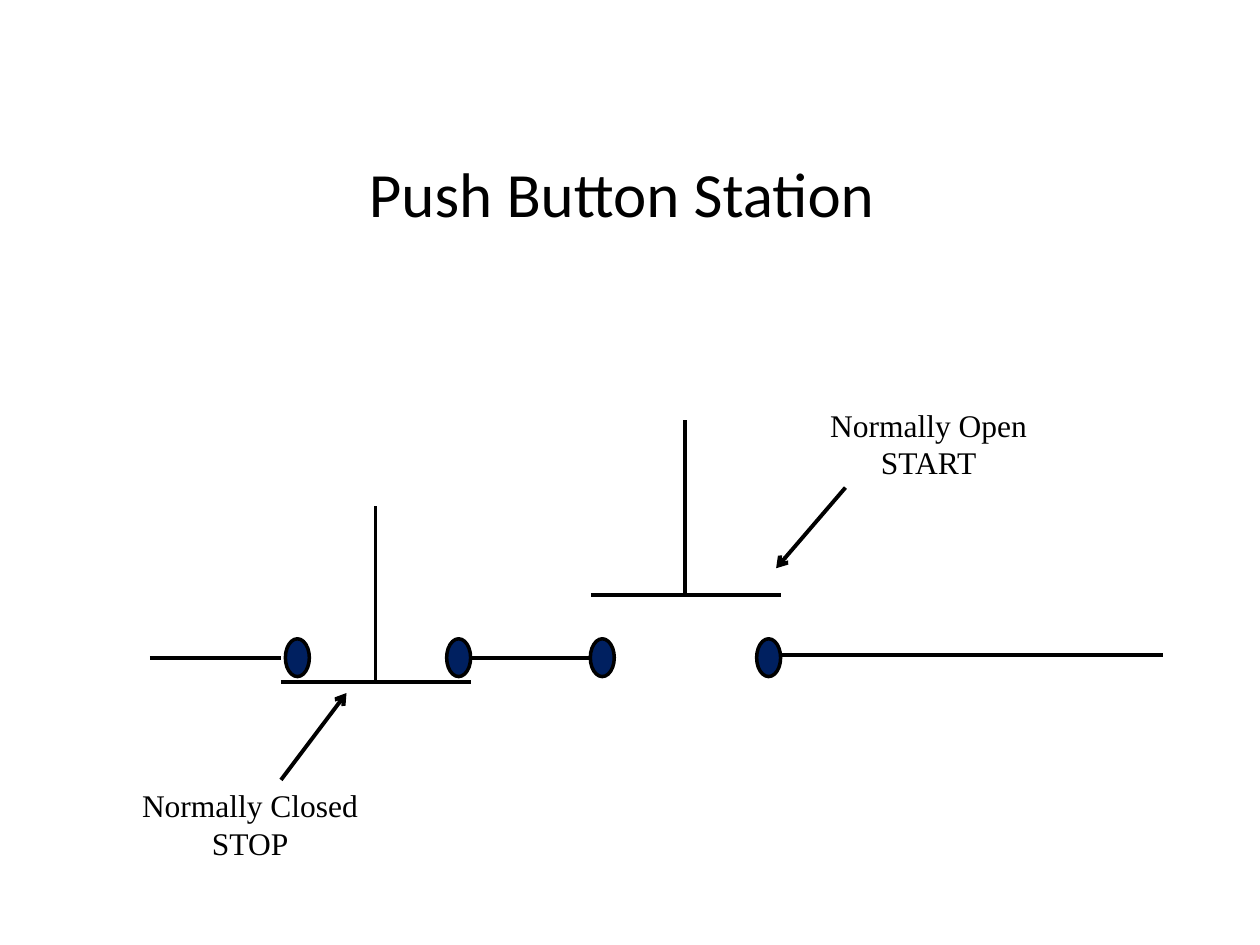
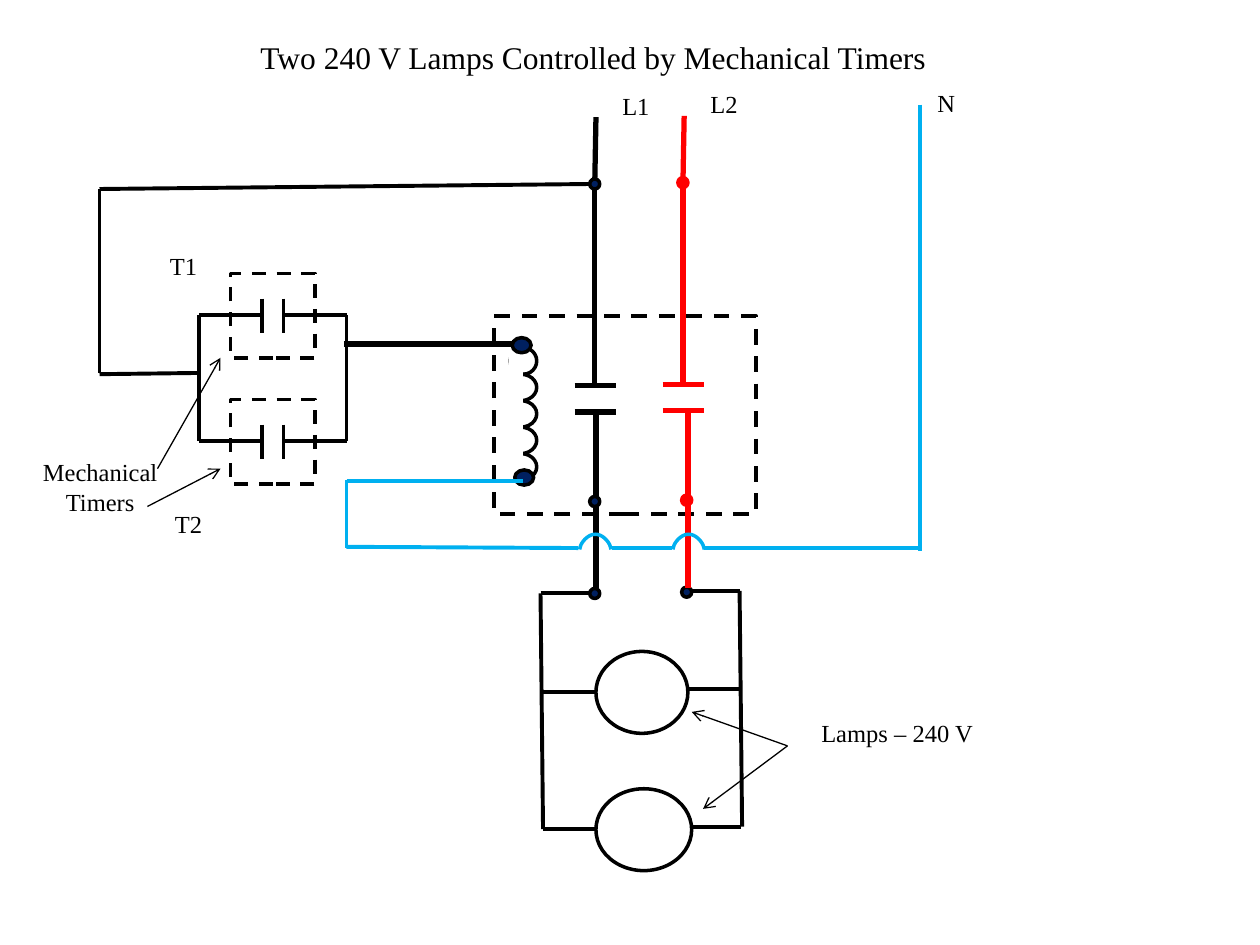
import math
from dataclasses import dataclass
from typing import Any

import pptx
import pptx.dml.color
import pptx.enum.dml
import pptx.enum.shapes
import pptx.enum.text
import pptx.oxml
import pptx.oxml.ns
import pptx.util
from pptx.util import Inches

BLACK, WHITE, NAVY = "000000", "FFFFFF", "002060"
HOT, NEUTRAL = "FF0000", "00B0F0"
SERIF, SANS = "Times New Roman", "Calibri"
WIRE, HEAVY, OUTLINE, POINTER = 2.25, 3, 2, 0.75
SHAPES = pptx.enum.shapes.MSO_SHAPE
ALIGN = pptx.enum.text.PP_ALIGN


def rgb(hex_color):
    return pptx.dml.color.RGBColor.from_string(hex_color)


def stroke(line, color, width):
    line.color.rgb = rgb(color)
    line.width = pptx.util.Pt(width)


@dataclass
class Region:
    slide: Any
    left: float
    top: float

    def place(self, x, y):
        return Inches(self.left + x), Inches(self.top + y)

    def wire(self, x1, y1, x2, y2, color=BLACK, width=WIRE, arrow=False):
        connector = self.slide.shapes.add_connector(
            pptx.enum.shapes.MSO_CONNECTOR.STRAIGHT,
            *self.place(x1, y1), *self.place(x2, y2))
        stroke(connector.line, color, width)
        if arrow:
            tail = pptx.oxml.parse_xml(
                '<a:tailEnd %s type="arrow"/>' % pptx.oxml.ns.nsdecls("a"))
            connector.line._get_or_add_ln().append(tail)
        properties = connector._element.spPr
        properties.append(pptx.oxml.parse_xml(
            "<a:effectLst %s/>" % pptx.oxml.ns.nsdecls("a")))

    def pointer(self, x1, y1, x2, y2, width=POINTER):
        self.wire(x1, y1, x2, y2, width=width, arrow=True)

    def outline(self, preset, x, y, width, height, fill=WHITE, color=BLACK,
                weight=OUTLINE, dashed=False):
        part = self.slide.shapes.add_shape(
            preset, *self.place(x, y), Inches(width), Inches(height))
        part.shadow.inherit = False
        part.fill.solid()
        part.fill.fore_color.rgb = rgb(fill)
        stroke(part.line, color, weight)
        if dashed:
            part.line.dash_style = pptx.enum.dml.MSO_LINE.DASH

    def terminal(self, x, y, width=0.08, height=0.08, fill=NAVY, color=BLACK):
        self.outline(SHAPES.OVAL, x - width / 2, y - height / 2,
                     width, height, fill, color)

    def hop(self, x, y, width, height, color):
        steps = 24
        points = [self.place(x + width * i / steps,
                             y - height * math.sin(math.pi * i / steps) ** 0.6)
                  for i in range(steps + 1)]
        builder = self.slide.shapes.build_freeform(*points[0], scale=1.0)
        builder.add_line_segments(points[1:], close=False)
        arch = builder.convert_to_shape()
        arch.shadow.inherit = False
        arch.fill.background()
        stroke(arch.line, color, OUTLINE)

    def label(self, x, y, width, height, text, size, font=SERIF,
              align=ALIGN.LEFT):
        frame = self.slide.shapes.add_textbox(
            *self.place(x, y), Inches(width), Inches(height)).text_frame
        frame.word_wrap = True
        frame.text = text
        for paragraph in frame.paragraphs:
            paragraph.alignment = align
            paragraph.font.size = pptx.util.Pt(size)
            paragraph.font.name = font
            paragraph.font.color.rgb = rgb(BLACK)


def push_button(slide, left, top):
    button = Region(slide, left, top)
    button.wire(0, 1.39, 1.51, 1.39)
    button.wire(0.75, 1.39, 0.75, 0)


def contact_line(slide, left, top):
    line = Region(slide, left, top)
    line.wire(0, 0, 1.04, 0)
    line.wire(2.55, 0, 3.5, 0)
    line.wire(5.01, -0.02, 8.04, -0.02)
    for x in (1.17, 2.45, 3.59, 4.91):
        line.terminal(x, 0, 0.19, 0.3)


def button_notes(slide, left, top):
    notes = Region(slide, left, top)
    notes.label(0, 3.02, 2.47, 0.71, "Normally Closed STOP", 18,
                align=ALIGN.CENTER)
    notes.pointer(1.48, 3.02, 2, 2.33, WIRE)
    notes.label(5.08, 0, 3.08, 0.71, "Normally Open\nSTART", 18,
                align=ALIGN.CENTER)
    notes.pointer(5.96, 0.7, 5.41, 1.34, WIRE)


def push_button_slide(slide):
    Region(slide, 2.83, 1.18).label(0, 0, 6.08, 0.71,
                                    "Push Button Station", 36, SANS)
    contact_line(slide, 1.19, 5.22)
    push_button(slide, 2.23, 4.02)
    push_button(slide, 4.69, 3.33)
    button_notes(slide, 0.75, 3.17)


def timer_pair(slide, left, top):
    timers = Region(slide, left, top)
    for y in (0, 1):
        timers.outline(SHAPES.RECTANGLE, 0.25, y, 0.67, 0.67, dashed=True)
        timers.wire(0, y + 0.33, 0.5, y + 0.33)
        timers.wire(0.67, y + 0.33, 1.17, y + 0.33)
        for plate in (0.5, 0.67):
            timers.wire(plate, y + 0.2, plate, y + 0.47)
    for rail in (0, 1.17):
        timers.wire(rail, 0.33, rail, 1.33)
    timers.label(-0.33, -0.23, 0.42, 0.34, "T1", 14)
    timers.label(-0.29, 1.82, 0.42, 0.34, "T2", 14)
    timers.label(-1.41, 1.41, 1.25, 0.57, "Mechanical Timers", 14,
                 align=ALIGN.CENTER)
    timers.pointer(-0.33, 1.55, 0.17, 0.67)
    timers.pointer(-0.41, 1.85, 0.17, 1.55)


def timer_feed(slide, left, top):
    feed = Region(slide, left, top)
    feed.wire(3.94, 0, 0, 0.04)
    feed.wire(0, 0.04, 0, 1.5)
    feed.wire(0, 1.51, 0.79, 1.5)


def contactor_coil(slide, left, top):
    coil = Region(slide, left, top)
    turns = 5
    pitch = 0.21
    for turn in (4, 0, 1, 3, 2):
        y = turn * pitch
        inset = 0.04 if turn == 0 else 0
        coil.outline(SHAPES.OVAL, inset, y, 0.25 - inset, pitch)
        coil.outline(SHAPES.RECTANGLE, inset, y - 0.06, 0.13 - inset, 0.39,
                     color=WHITE)
    coil.wire(-1.28, -0.03, 0.15, -0.03, width=HEAVY)
    coil.terminal(0.13, -0.02, 0.15, 0.12)
    coil.terminal(0.15, turns * pitch - 0.02, 0.15, 0.12)


def line_conductor(slide, left, top, name, color, fill, shift):
    conductor = Region(slide, left, top)
    conductor.label(0.12, -0.26, 0.42, 0.34, name, 14)
    conductor.terminal(shift, 3.78)
    conductor.wire(0.01, 0, 0, 0.56, color, HEAVY)
    conductor.wire(0, 0.56, 0, 2.13, color, HEAVY)
    for plate in (2.13, 2.34):
        conductor.wire(-0.16, plate, 0.17, plate, color, HEAVY)
    conductor.terminal(0, 0.53, fill=fill, color=color)
    conductor.wire(shift + 0.01, 2.36, shift + 0.01, 3.75, color, HEAVY)
    conductor.terminal(shift, 3.05, fill=fill, color=color)


def lamp_bank(slide, left, top):
    bank = Region(slide, left, top)
    for y, right, diameter in ((0.8, 1.17, 0.73), (1.89, 1.2, 0.76)):
        bank.outline(SHAPES.OVAL, 0.44, y - 0.32, diameter, 0.65)
        bank.wire(0.02, y, 0.43, y)
        bank.wire(right, y - 0.02, 1.59, y - 0.02)
    bank.wire(0, 0.02, 0.41, 0.02)
    bank.wire(0, 0.02, 0.02, 1.89)
    bank.wire(1.2, 0, 1.58, 0)
    bank.wire(1.58, 0, 1.6, 1.87)
    bank.label(2.13, 0.96, 1.5, 0.34, "Lamps – 240 V", 14)
    bank.pointer(1.96, 1.23, 1.2, 0.96)
    bank.pointer(1.96, 1.23, 1.29, 1.73)


def neutral_wire(slide, left, top):
    neutral = Region(slide, left, top)
    neutral.label(4.59, -0.18, 0.42, 0.34, "N", 14)
    for run in ((0, 2.98, 0, 3.52), (0, 3.51, 1.84, 3.52),
                (2.11, 3.52, 2.58, 3.52), (2.84, 3.52, 4.57, 3.52),
                (4.55, 0, 4.55, 3.54), (0, 2.99, 1.4, 2.99)):
        neutral.wire(*run, color=NEUTRAL)
    for x in (1.85, 2.59):
        neutral.hop(x, 3.53, 0.25, 0.12, NEUTRAL)


def lamp_timer_slide(slide):
    Region(slide, 1.25, 0.25).label(
        0, 0, 6.92, 0.4, "Two 240 V Lamps Controlled by Mechanical Timers",
        18, align=ALIGN.CENTER)
    Region(slide, 3.92, 2.51).outline(SHAPES.RECTANGLE, 0, 0, 2.08, 1.57,
                                      weight=WIRE, dashed=True)
    timer_pair(slide, 1.58, 2.17)
    contactor_coil(slide, 4.01, 2.76)
    timer_feed(slide, 0.79, 1.46)
    lamp_bank(slide, 4.29, 4.69)
    line_conductor(slide, 4.72, 0.93, "L1", BLACK, NAVY, 0)
    line_conductor(slide, 5.42, 0.92, "L2", HOT, HOT, 0.03)
    neutral_wire(slide, 2.75, 0.83)


def main():
    deck = pptx.Presentation()
    deck.slide_width, deck.slide_height = Inches(10), Inches(7.5)
    blank = deck.slide_layouts[6]
    for build in (push_button_slide, lamp_timer_slide):
        build(deck.slides.add_slide(blank))
    deck.save("out.pptx")


if __name__ == "__main__":
    main()
